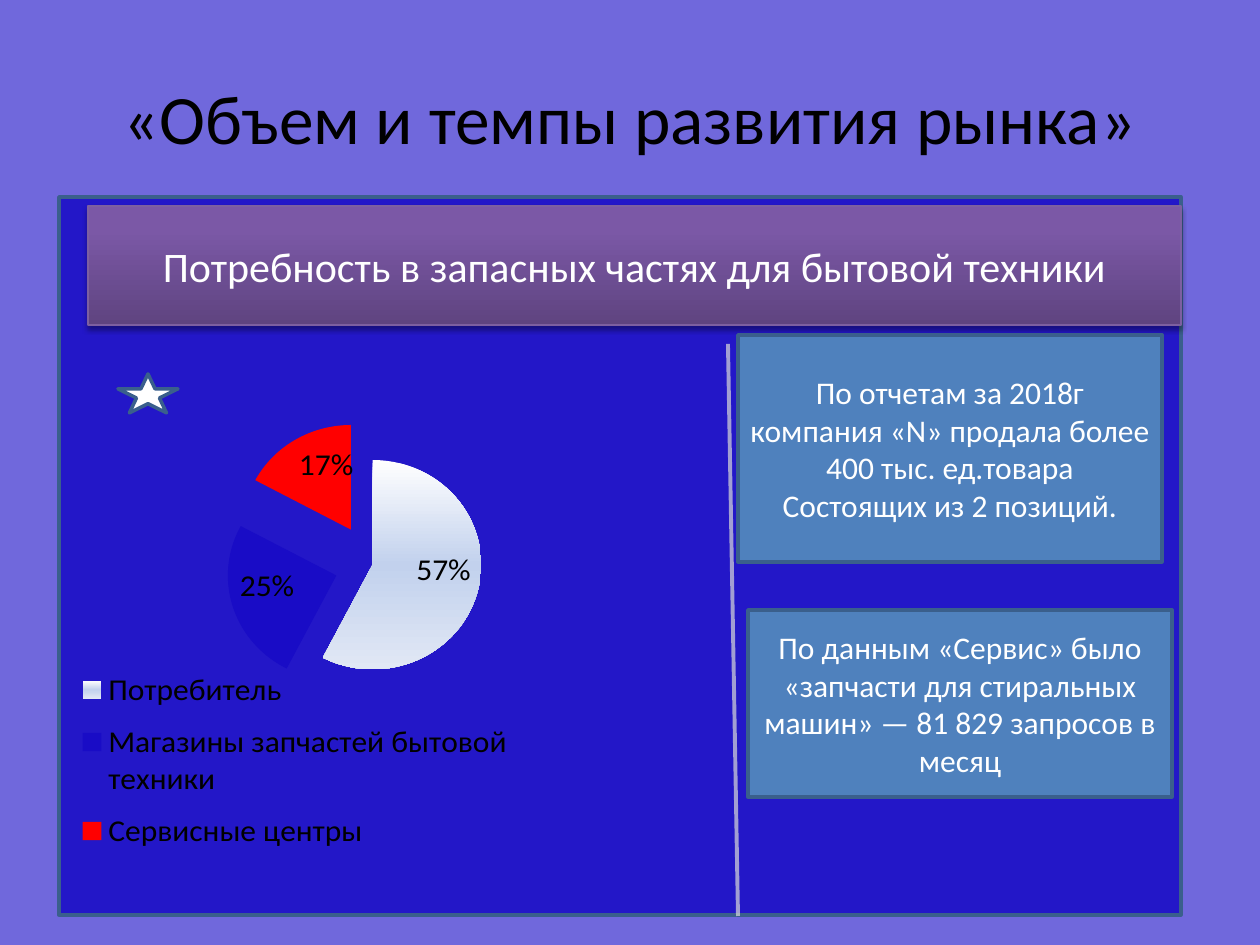
from dataclasses import dataclass

from lxml.etree import SubElement
from pptx import Presentation
from pptx.chart.data import CategoryChartData
from pptx.dml.color import RGBColor
from pptx.enum.chart import XL_CHART_TYPE, XL_LABEL_POSITION, XL_LEGEND_POSITION
from pptx.enum.shapes import MSO_CONNECTOR, MSO_SHAPE
from pptx.enum.text import MSO_ANCHOR, PP_ALIGN
from pptx.oxml import parse_xml
from pptx.oxml.ns import nsdecls, qn
from pptx.util import Emu, Pt

EMU_PER_PX = 914400 / 126


@dataclass(frozen=True)
class Theme:
    """Colours, font and type sizes of the slide."""
    font: str = "Calibri"
    title: float = 39.6
    heading: int = 24
    body: int = 18
    black: str = "000000"
    white: str = "FFFFFF"
    backdrop: str = "7068DC"
    panel: str = "190CC6"
    card: str = "4F81BD"
    outline: str = "3A5F8C"
    banner_line: str = "7D60A0"
    divider: str = "D9D9D9"
    red: str = "FF0000"
    banner_stops: tuple = ((0, "5F4480"), (80, "7B58A6"), (100, "7C57A8"))
    slice_stops: tuple = ((0, "FFFFFF"), (50, "C2D1ED"), (100, "E1E8F5"))


@dataclass(frozen=True)
class Box:
    """A filled and outlined shape, measured in px."""
    x: int
    y: int
    w: int
    h: int
    fill: str | tuple
    text: tuple = ()
    kind: MSO_SHAPE = MSO_SHAPE.RECTANGLE
    size: float = 18
    line: str = "3A5F8C"
    line_width: float = 2
    alpha: int = 100


@dataclass(frozen=True)
class Slice:
    """One share of the pie."""
    name: str
    value: int
    fill: str | tuple
    explosion: int = 0


T = Theme()
PANEL = Box(59, 197, 1122, 718, T.panel, alpha=88)
BANNER = Box(88, 206, 1093, 119, T.banner_stops,
             ("Потребность в запасных частях для бытовой техники",),
             size=T.heading, line=T.banner_line, line_width=0.75)
STAR = Box(118, 374, 60, 39, T.white, kind=MSO_SHAPE.STAR_5_POINT)
CARDS = (
    Box(738, 335, 424, 227, T.card,
        ("По отчетам за 2018г компания «N» продала более 400 тыс. ед.товара",
         "Состоящих из 2 позиций.")),
    Box(748, 610, 424, 187, T.card,
        ("По данным «Сервис» было «запчасти для стиральных машин»\u00a0—\u00a081\u00a0829 запросов в месяц",)),
)
SLICES = (
    Slice("Потребитель", 57, T.slice_stops),
    Slice("Магазины запчастей бытовой техники", 25, T.panel, 35),
    Slice("Сервисные центры", 17, T.red, 39),
)


def px(n: float) -> Emu:
    """Turn px into EMU."""
    return Emu(round(n * EMU_PER_PX))


def rgb(code: str) -> RGBColor:
    """Read a hex colour."""
    return RGBColor.from_string(code)


def set_alpha(parent, percent: int) -> None:
    """Make the solid colour below an element translucent."""
    color = next(parent.iter(qn("a:srgbClr")))
    SubElement(color, qn("a:alpha"), val=str(percent * 1000))


def paint(fill, colors: str | tuple, angle: int = 90) -> None:
    """Fill with one colour or with gradient stops."""
    if isinstance(colors, str):
        fill.solid()
        fill.fore_color.rgb = rgb(colors)
        return
    fill.gradient()
    stops = "".join(f'<a:gs pos="{pos * 1000}"><a:srgbClr val="{c}"/></a:gs>' for pos, c in colors)
    grad = parse_xml(f'<a:gradFill {nsdecls("a")} rotWithShape="1"><a:gsLst>{stops}</a:gsLst>'
                     f'<a:lin ang="{angle * 60000}" scaled="0"/></a:gradFill>')
    old = fill._xPr.find(qn("a:gradFill"))
    old.getparent().replace(old, grad)


def write(tf, *lines: str, size: float, color: str) -> None:
    """Write centred paragraphs in one format."""
    tf.word_wrap = True
    tf.vertical_anchor = MSO_ANCHOR.MIDDLE
    for i, line in enumerate(lines):
        p = tf.paragraphs[0] if i == 0 else tf.add_paragraph()
        p.alignment = PP_ALIGN.CENTER
        r = p.add_run()
        r.text = line
        r.font.name = T.font
        r.font.size = Pt(size)
        r.font.color.rgb = rgb(color)


def draw_box(s, box: Box):
    """Draw a box with its text."""
    sp = s.shapes.add_shape(box.kind, px(box.x), px(box.y), px(box.w), px(box.h))
    sp.shadow.inherit = False
    paint(sp.fill, box.fill, angle=270)
    if box.alpha < 100:
        set_alpha(sp._element.spPr, box.alpha)
    sp.line.color.rgb = rgb(box.line)
    sp.line.width = Pt(box.line_width)
    if box.text:
        write(sp.text_frame, *box.text, size=box.size, color=T.white)
    return sp


def add_shadow(sp) -> None:
    """Drop a soft shadow below a shape."""
    effects = sp._element.spPr.find(qn("a:effectLst"))
    shadow = SubElement(effects, qn("a:outerShdw"), blurRad=str(Pt(3.1)), dist=str(Pt(1.8)),
                        dir="5400000", rotWithShape="0")
    SubElement(shadow, qn("a:srgbClr"), val=T.black)
    set_alpha(shadow, 35)


def draw_divider(s, x1: int, y1: int, x2: int, y2: int) -> None:
    """Draw the translucent line between chart and cards."""
    line = s.shapes.add_connector(MSO_CONNECTOR.STRAIGHT, px(x1), px(y1), px(x2), px(y2))
    line.line.color.rgb = rgb(T.divider)
    line.line.width = Pt(2.25)
    set_alpha(line._element.spPr, 70)
    SubElement(line._element.spPr, qn("a:effectLst"))


def layout(x: float, y: float, w: float, h: float, inner: bool = False):
    """Build a manual layout for a chart part."""
    target = '<c:layoutTarget val="inner"/>' if inner else ""
    sizes = "".join(f'<c:{k} val="{v}"/>' for k, v in zip("xywh", (x, y, w, h)))
    return parse_xml(f'<c:layout {nsdecls("c")}><c:manualLayout>{target}<c:xMode val="edge"/>'
                     f'<c:yMode val="edge"/>{sizes}</c:manualLayout></c:layout>')


def draw_pie(s, x: int, y: int, w: int, h: int) -> None:
    """Draw the pie of demand shares with its legend."""
    data = CategoryChartData()
    data.categories = [part.name for part in SLICES]
    data.add_series("Series 1", [part.value for part in SLICES])
    chart = s.shapes.add_chart(XL_CHART_TYPE.PIE, px(x), px(y), px(w), px(h), data).chart
    chart.has_title = False
    chart.font.name, chart.font.size = T.font, Pt(T.body)
    chart.font.color.rgb = rgb(T.black)

    plot = chart.plots[0]
    plot.vary_by_categories = True
    plot.has_data_labels = True
    labels = plot.data_labels
    labels.show_value = True
    labels.show_percentage = False
    labels.number_format, labels.number_format_is_linked = '0"%"', False
    labels.position = XL_LABEL_POSITION.INSIDE_END
    for i, part in enumerate(SLICES):
        point = plot.series[0].points[i]
        paint(point.format.fill, part.fill)
        point.format.line.fill.background()
        if part.explosion:
            dPt = point.format.fill._xPr.getparent()
            explosion = parse_xml(f'<c:explosion {nsdecls("c")} val="{part.explosion}"/>')
            dPt.find(qn("c:spPr")).addprevious(explosion)

    area = chart._chartSpace.chart.plotArea
    for old in area.findall(qn("c:layout")):
        area.remove(old)
    area.insert(0, layout(0, 0.04, 0.95, 0.46, inner=True))
    chart.has_legend = True
    legend = chart.legend
    legend.position = XL_LEGEND_POSITION.TOP
    legend.include_in_layout = False
    for old in legend._element.findall(qn("c:layout")):
        legend._element.remove(old)
    legend._element.find(qn("c:legendPos")).addnext(layout(0.01, 0.47, 0.69, 0.46))


def main() -> None:
    """Build the slide and save it."""
    prs = Presentation()
    prs.slide_width, prs.slide_height = px(1260), px(945)
    s = prs.slides.add_slide(prs.slide_layouts[5])
    paint(s.background.fill, T.backdrop)
    title = s.shapes.title
    title.left, title.top, title.width, title.height = px(63), px(38), px(1134), px(158)
    write(title.text_frame, "«Объем и темпы развития рынка»", size=T.title, color=T.black)
    draw_box(s, PANEL)
    draw_pie(s, 64, 425, 650, 472)
    add_shadow(draw_box(s, BANNER))
    draw_box(s, STAR)
    draw_divider(s, 728, 344, 738, 916)
    for card in CARDS:
        draw_box(s, card)
    prs.save("out.pptx")


if __name__ == "__main__":
    main()
